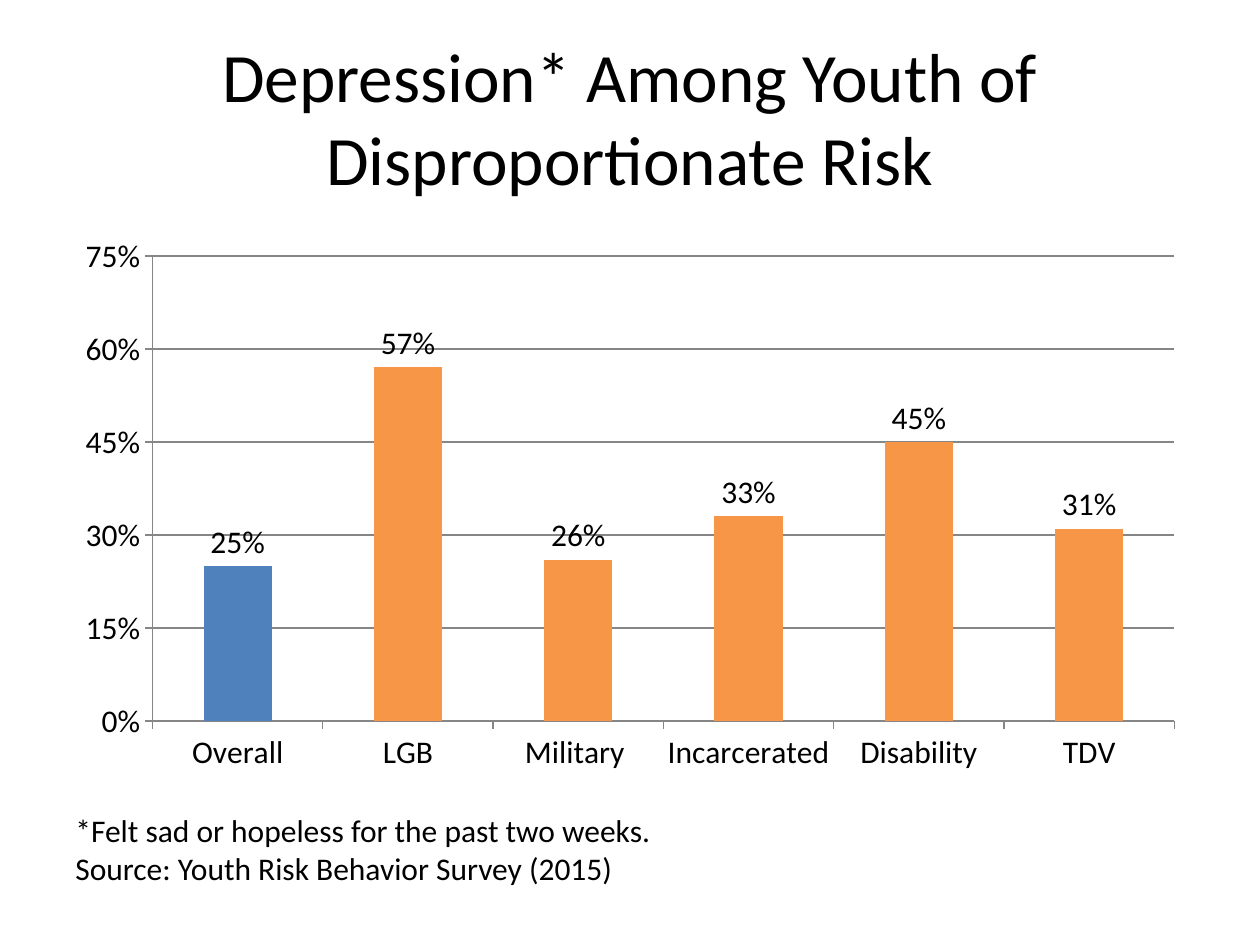
from pptx import Presentation
from pptx.chart.data import CategoryChartData
from pptx.dml.color import RGBColor
from pptx.enum.chart import XL_CHART_TYPE, XL_LABEL_POSITION, XL_TICK_MARK
from pptx.enum.text import MSO_ANCHOR, PP_ALIGN
from pptx.util import Cm, Pt

BLACK = RGBColor(0x00, 0x00, 0x00)
GRAY = RGBColor(0x86, 0x86, 0x86)
BLUE = RGBColor(0x4F, 0x81, 0xBD)
ORANGE = RGBColor(0xF7, 0x96, 0x46)
FACE = "Calibri"
LEFT, WIDTH = Cm(1.27), Cm(22.86)
RISKS = {
    "Overall": 0.25,
    "LGB": 0.57,
    "Military ": 0.26,
    "Incarcerated": 0.33,
    "Disability": 0.45,
    "TDV": 0.31,
}


def style(font, size):
    font.name = FACE
    font.size = Pt(size)
    font.color.rgb = BLACK


def add_text(slide, box, lines, size, align=PP_ALIGN.LEFT, anchor=MSO_ANCHOR.TOP):
    frame = slide.shapes.add_textbox(*box).text_frame
    frame.word_wrap = True
    frame.vertical_anchor = anchor
    for i, line in enumerate(lines):
        para = frame.add_paragraph() if i else frame.paragraphs[0]
        para.alignment = align
        run = para.add_run()
        run.text = line
        style(run.font, size)


def set_axis(axis):
    axis.major_tick_mark = XL_TICK_MARK.OUTSIDE
    axis.minor_tick_mark = XL_TICK_MARK.NONE
    axis.format.line.color.rgb = GRAY
    axis.format.line.width = Pt(0.75)


def add_bars(slide, box):
    data = CategoryChartData(number_format="0%")
    data.categories = list(RISKS)
    data.add_series("Series 1", list(RISKS.values()))
    chart = slide.shapes.add_chart(XL_CHART_TYPE.COLUMN_CLUSTERED, *box, data).chart
    style(chart.font, 18)
    chart.has_legend = False
    chart.has_title = False

    scale = chart.value_axis
    set_axis(chart.category_axis)
    set_axis(scale)
    scale.minimum_scale = 0
    scale.maximum_scale = 0.75
    scale.major_unit = 0.15
    scale.tick_labels.number_format = "0%"
    scale.tick_labels.number_format_is_linked = False
    scale.has_major_gridlines = True
    scale.major_gridlines.format.line.color.rgb = GRAY
    scale.major_gridlines.format.line.width = Pt(0.75)

    plot = chart.plots[0]
    plot.gap_width = 150
    plot.vary_by_categories = False
    plot.has_data_labels = True
    labels = plot.data_labels
    labels.show_value = True
    labels.number_format = "0%"
    labels.number_format_is_linked = False
    labels.position = XL_LABEL_POSITION.OUTSIDE_END
    style(labels.font, 18)

    bars = plot.series[0]
    bars.invert_if_negative = False
    bars.format.fill.solid()
    bars.format.fill.fore_color.rgb = BLUE
    for i in range(1, len(RISKS)):
        fill = bars.points[i].format.fill
        fill.solid()
        fill.fore_color.rgb = ORANGE


def main():
    deck = Presentation()
    deck.slide_width, deck.slide_height = Cm(25.4), Cm(19.05)
    slide = deck.slides.add_slide(deck.slide_layouts[6])
    add_text(
        slide,
        (LEFT, Cm(0.76), WIDTH, Cm(3.18)),
        ["Depression* Among Youth of Disproportionate Risk"],
        39.6,
        PP_ALIGN.CENTER,
        MSO_ANCHOR.MIDDLE,
    )
    add_bars(slide, (LEFT, Cm(4.55), WIDTH, Cm(11.23)))
    notes = [
        "*Felt sad or hopeless for the past two weeks.",
        "Source: Youth Risk Behavior Survey (2015)",
    ]
    add_text(slide, (LEFT, Cm(16.23), Cm(12.7), Cm(1.8)), notes, 18)
    deck.save("out.pptx")


if __name__ == "__main__":
    main()
